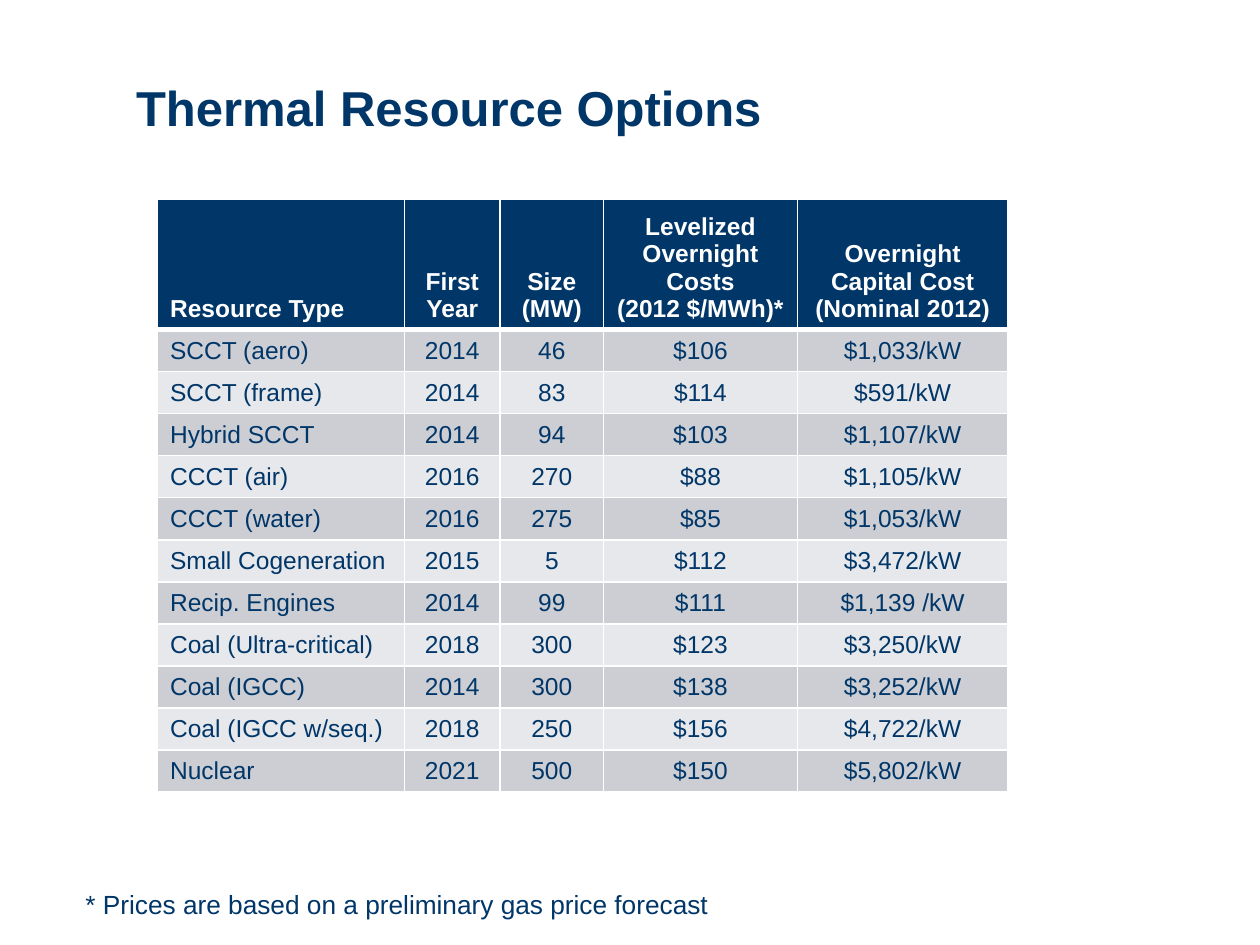
from lxml.etree import SubElement
from pptx import Presentation
from pptx.dml.color import RGBColor
from pptx.enum.text import MSO_ANCHOR, PP_ALIGN
from pptx.oxml.ns import qn
from pptx.util import Inches, Pt

COLORS = {"navy": "013668", "white": "FFFFFF", "dark_band": "CCCED4", "light_band": "E7E8EB"}
FONT = "Arial"

HEADERS = ["Resource Type", "First Year", "Size (MW)",
           "Levelized\nOvernight Costs\n(2012 $/MWh)*",
           "Overnight\nCapital Cost\n(Nominal 2012)"]
RESOURCES = [
    ("SCCT (aero)", "2014", "46", "$106", "$1,033/kW"),
    ("SCCT (frame)", "2014", "83", "$114", "$591/kW"),
    ("Hybrid SCCT", "2014", "94", "$103", "$1,107/kW"),
    ("CCCT (air)", "2016", "270", "$88", "$1,105/kW"),
    ("CCCT (water)", "2016", "275", "$85", "$1,053/kW"),
    ("Small Cogeneration", "2015", "5", "$112", "$3,472/kW"),
    ("Recip. Engines", "2014", "99", "$111", "$1,139 /kW"),
    ("Coal (Ultra-critical)", "2018", "300", "$123", "$3,250/kW"),
    ("Coal (IGCC)", "2014", "300", "$138", "$3,252/kW"),
    ("Coal (IGCC w/seq.)", "2018", "250", "$156", "$4,722/kW"),
    ("Nuclear", "2021", "500", "$150", "$5,802/kW"),
]
COLUMN_WEIGHTS = [1.96, 0.76, 0.82, 1.54, 1.67]
ROW_WEIGHTS = [0.97] + [0.32] * len(RESOURCES)


def percent_box(prs, x, y, w, h):
    """Turn percentages of the slide's size into a box."""
    sw, sh = prs.slide_width, prs.slide_height
    return [int(v * size / 100) for v, size in zip((x, y, w, h), (sw, sh, sw, sh))]


def write(tf, text, size=14, color="navy", bold=False, align=PP_ALIGN.LEFT, spacing=None):
    for i, line in enumerate(text.split("\n")):
        p = tf.add_paragraph() if i else tf.paragraphs[0]
        p.alignment = align
        if spacing:
            p.line_spacing = Pt(spacing)
        r = p.add_run()
        r.text = line
        r.font.name, r.font.size, r.font.bold = FONT, Pt(size), bold
        r.font.color.rgb = RGBColor.from_string(COLORS[color])


def add_borders(cell, bottom):
    tcPr = cell._tc.get_or_add_tcPr()
    for side, width in (("L", 1), ("R", 1), ("T", 1), ("B", bottom)):
        ln = SubElement(tcPr, qn(f"a:ln{side}"), w=str(Pt(width)))
        SubElement(SubElement(ln, qn("a:solidFill")), qn("a:srgbClr"), val=COLORS["white"])


def add_title(s, box):
    tf = s.shapes.add_textbox(*box).text_frame
    tf.word_wrap = True
    tf.vertical_anchor = MSO_ANCHOR.BOTTOM
    tf.margin_left = tf.margin_right = tf.margin_top = tf.margin_bottom = 0
    write(tf, "Thermal Resource Options", size=28, bold=True, spacing=27)


def add_resource_table(s, box):
    rows = [HEADERS, *RESOURCES]
    table = s.shapes.add_table(len(rows), len(HEADERS), *box).table
    for column, weight in zip(table.columns, COLUMN_WEIGHTS):
        column.width = int(box[2] * weight / sum(COLUMN_WEIGHTS))
    for row, weight in zip(table.rows, ROW_WEIGHTS):
        row.height = int(box[3] * weight / sum(ROW_WEIGHTS))

    for i, values in enumerate(rows):
        header = i == 0
        fill = "navy" if header else "dark_band" if i % 2 else "light_band"
        for j, value in enumerate(values):
            cell = table.cell(i, j)
            add_borders(cell, bottom=3 if header else 1)
            cell.fill.solid()
            cell.fill.fore_color.rgb = RGBColor.from_string(COLORS[fill])
            cell.vertical_anchor = MSO_ANCHOR.BOTTOM if header else MSO_ANCHOR.MIDDLE
            write(cell.text_frame, value, bold=header, color="white" if header else "navy",
                  align=PP_ALIGN.CENTER if j else PP_ALIGN.LEFT)


def add_footnote(s, box):
    tf = s.shapes.add_textbox(*box).text_frame
    tf.word_wrap = True
    write(tf, "* Prices are based on a preliminary gas price forecast", size=15)


def main():
    prs = Presentation()
    prs.slide_width, prs.slide_height = Inches(10), Inches(7.5)
    s = prs.slides.add_slide(prs.slide_layouts[6])
    add_title(s, percent_box(prs, 10.8, 1.6, 84.2, 12.8))
    add_resource_table(s, percent_box(prs, 12.5, 21.07, 67.5, 59.87))
    add_footnote(s, percent_box(prs, 5.8, 93.33, 80.8, 4.67))
    prs.save("out.pptx")


if __name__ == "__main__":
    main()
